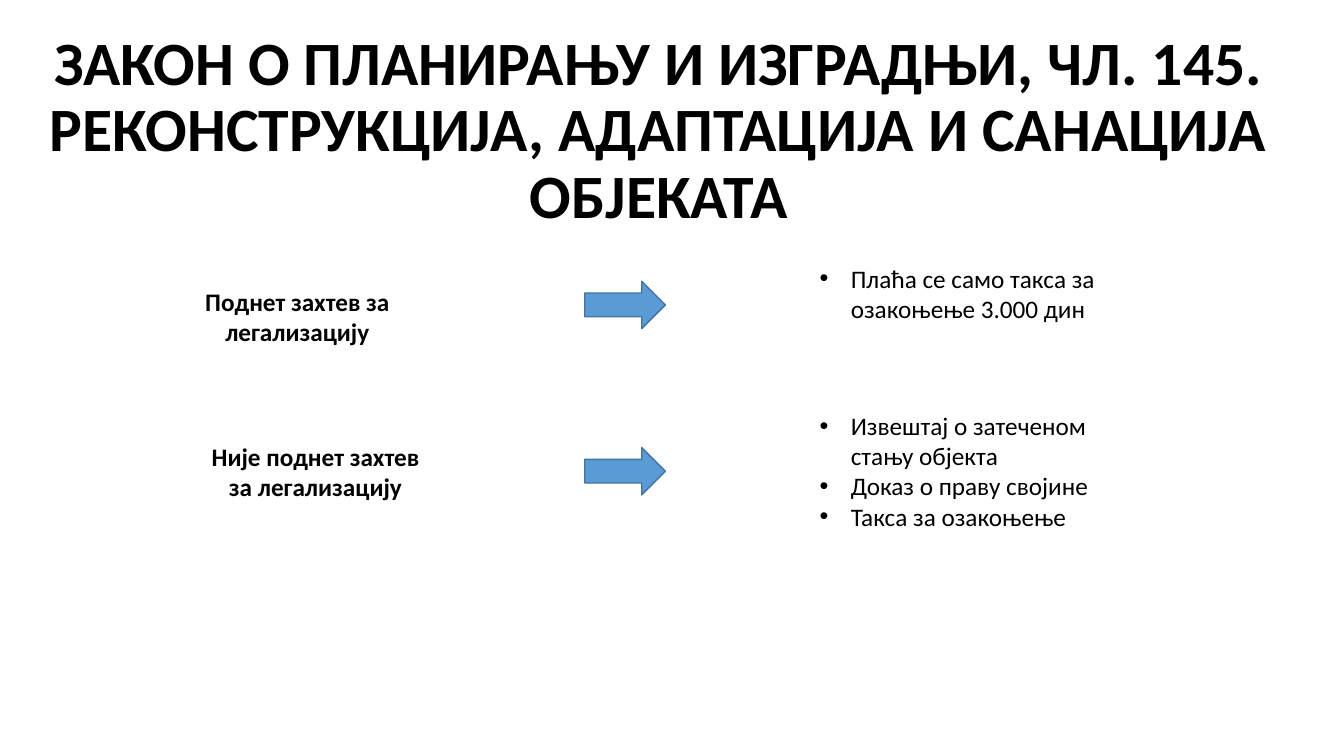
from dataclasses import dataclass

from lxml.etree import SubElement
from pptx import Presentation
from pptx.dml.color import RGBColor
from pptx.enum.shapes import MSO_SHAPE
from pptx.enum.text import MSO_ANCHOR, MSO_AUTO_SIZE, PP_ALIGN
from pptx.oxml.ns import qn
from pptx.util import Pt

SCALE = 9144  # EMU in one px, 100 px to the inch


@dataclass(frozen=True)
class Theme:
    font: str = "Calibri"
    ink: RGBColor = RGBColor(0x00, 0x00, 0x00)
    fill: RGBColor = RGBColor(0x5B, 0x9B, 0xD5)
    edge: RGBColor = RGBColor(0x43, 0x73, 0x9E)
    head: int = 44
    body: int = 18
    rule: int = 1


THEME = Theme()
TITLE = ("ЗАКОН О ПЛАНИРАЊУ И ИЗГРАДЊИ, ЧЛ. 145. "
         "РЕКОНСТРУКЦИЈА, АДАПТАЦИЈА И САНАЦИЈА ОБЈЕКАТА")
INDENT = 31

# Each case: label and its box, top of the arrow, results and their box
CASES = [
    ("Поднет захтев за легализацију", (188, 279, 214, 71), 279,
     ["Плаћа се само такса за озакоњење 3.000 дин"], (803, 256, 322, 71)),
    ("Није поднет захтев за легализацију", (188, 433, 250, 71), 444,
     ["Извештај о затеченом стању објекта",
      "Доказ о праву својине",
      "Такса за озакоњење"], (803, 402, 322, 131)),
]


def px(*sizes):
    return [size * SCALE for size in sizes]


def style(para, size, bold=False):
    font = para.font
    font.name = THEME.font
    font.size = Pt(size)
    font.bold = bold
    font.color.rgb = THEME.ink


def add_title(slide):
    title = slide.shapes.title
    title.left, title.top, title.width, title.height = px(34, 36, 1239, 190)
    frame = title.text_frame
    frame.text = TITLE
    frame.word_wrap = True
    frame.auto_size = MSO_AUTO_SIZE.NONE
    frame.vertical_anchor = MSO_ANCHOR.MIDDLE
    para = frame.paragraphs[0]
    para.alignment = PP_ALIGN.CENTER
    para.line_spacing = 0.9
    style(para, THEME.head, bold=True)


def add_box(slide, box, lines):
    """Add a wrapping text box and return its paragraphs."""
    frame = slide.shapes.add_textbox(*px(*box)).text_frame
    frame.word_wrap = True
    frame.auto_size = MSO_AUTO_SIZE.SHAPE_TO_FIT_TEXT
    frame.text = "\n".join(lines)
    return frame.paragraphs


def add_label(slide, text, box):
    for para in add_box(slide, box, [text]):
        para.alignment = PP_ALIGN.CENTER
        style(para, THEME.body, bold=True)


def add_list(slide, lines, box):
    for para in add_box(slide, box, lines):
        props = para._p.get_or_add_pPr()
        props.set("marL", str(INDENT * SCALE))
        props.set("indent", str(-INDENT * SCALE))
        SubElement(props, qn("a:buFont")).set("typeface", "Arial")
        SubElement(props, qn("a:buChar")).set("char", "•")
        style(para, THEME.body)


def add_arrow(slide, top):
    arrow = slide.shapes.add_shape(MSO_SHAPE.RIGHT_ARROW, *px(580, top, 80, 47))
    arrow.shadow.inherit = False
    arrow.fill.solid()
    arrow.fill.fore_color.rgb = THEME.fill
    arrow.line.color.rgb = THEME.edge
    arrow.line.width = Pt(THEME.rule)


def main():
    deck = Presentation()
    deck.slide_width, deck.slide_height = px(1333, 750)
    slide = deck.slides.add_slide(deck.slide_layouts.get_by_name("Title Only"))
    add_title(slide)
    for label, place, top, results, area in CASES:
        add_label(slide, label, place)
        add_arrow(slide, top)
        add_list(slide, results, area)
    deck.save("out.pptx")


if __name__ == "__main__":
    main()
